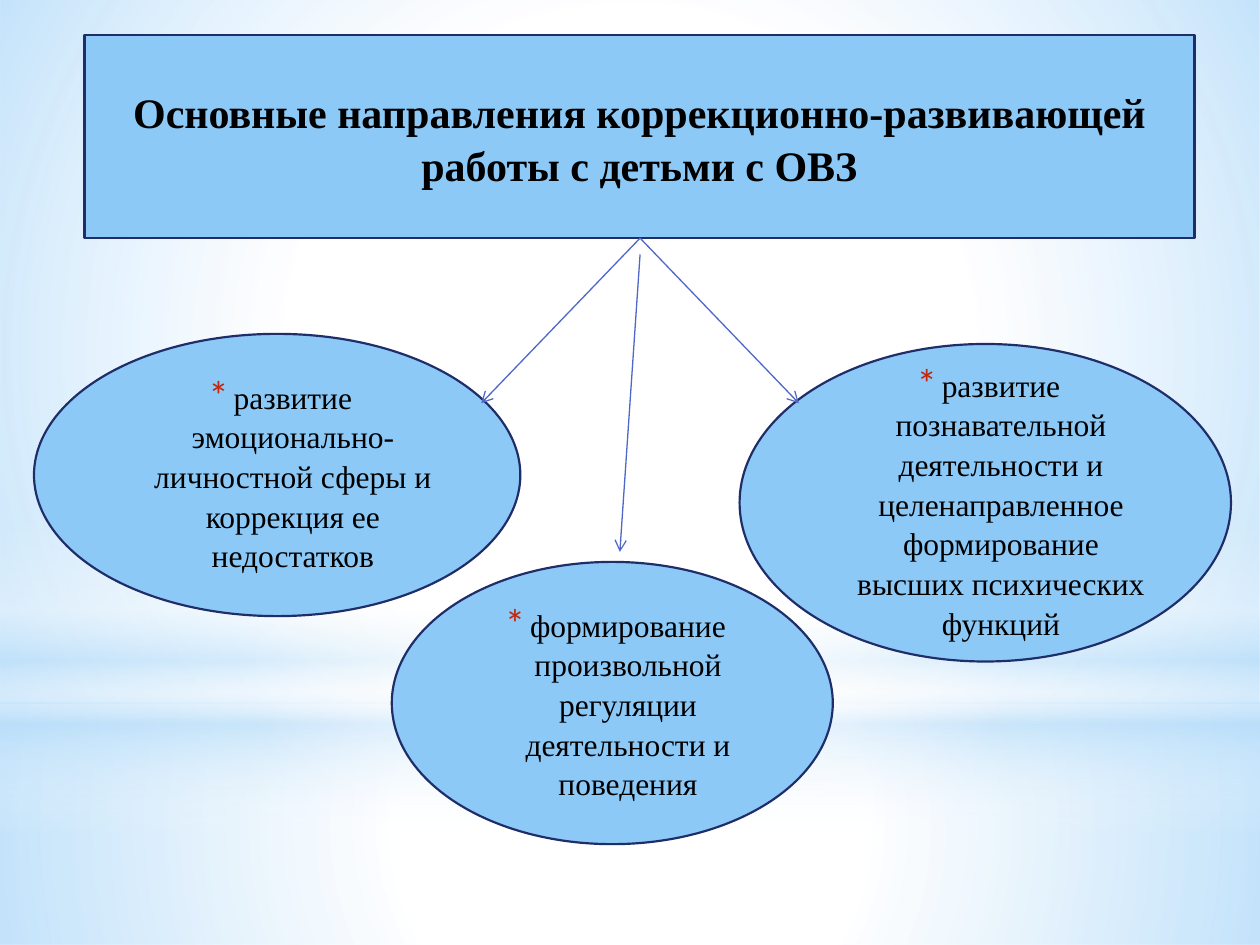
from lxml.etree import SubElement
from pptx import Presentation
from pptx.dml.color import RGBColor
from pptx.enum.shapes import MSO_CONNECTOR, MSO_SHAPE as Preset
from pptx.enum.text import MSO_ANCHOR, MSO_AUTO_SIZE, PP_ALIGN
from pptx.oxml import parse_xml
from pptx.oxml.ns import nsdecls, qn
from pptx.util import Inches, Pt

WHITE = RGBColor(0xFF, 0xFF, 0xFF)
BLACK = RGBColor(0, 0, 0)
PALE_BLUE = RGBColor(0xB4, 0xDC, 0xFA)
SKY_BLUE = RGBColor(0x8C, 0xC9, 0xF7)
NAVY = RGBColor(0x1F, 0x2E, 0x69)
ARROW_BLUE = RGBColor(0x4E, 0x67, 0xC8)
BULLET_RED = RGBColor(0xC3, 0x26, 0x0C)
FONT = "Times New Roman"

CIRCLE = ('<a:path path="circle"><a:fillToRect l="50000" t="50000" '
          'r="50000" b="50000"/></a:path>')
DOWNWARD = '<a:lin ang="5400000" scaled="0"/>'

# Preset, box, gradient direction, stops as (position %, colour, opacity %)
BACKDROP = [
    (Preset.RECTANGLE, (0, 5.58, 10, 1.92), CIRCLE,
     [(0, WHITE, 91), (37, WHITE, 76), (100, PALE_BLUE, 79)]),
    (Preset.RECTANGLE, (0, 0, 10, 5.58), CIRCLE,
     [(0, WHITE, 89), (48, WHITE, 62), (100, PALE_BLUE, 79)]),
    (Preset.RECTANGLE, (0, 4.12, 10, 2.5), DOWNWARD,
     [(0, WHITE, 0), (29, WHITE, 30), (45, PALE_BLUE, 40),
      (55, WHITE, 26), (65, PALE_BLUE, 60), (100, WHITE, 0)]),
    (Preset.OVAL, (0, 1.75, 10, 5.58), CIRCLE,
     [(0, WHITE, 100), (56, WHITE, 0)]),
]
TITLE = "Основные направления коррекционно-развивающей работы с детьми\u00a0с ОВЗ"
MIDDLE = ("формирование произвольной регуляции деятельности и поведения",
          (3.11, 4.46, 3.5, 2.24))
SIDES = [
    ("развитие познавательной деятельности и целенаправленное "
     "формирование высших психических функций", (5.87, 2.73, 3.9, 2.52)),
    ("развитие эмоционально-личностной сферы и коррекция ее недостатков",
     (0.27, 2.65, 3.86, 2.24)),
]
ARROWS = [((5.08, 1.89), (3.82, 3.2)),
          ((5.08, 1.89), (6.34, 3.2)),
          ((5.08, 2.02), (4.92, 4.38))]


def add_bullet(paragraph):
    properties = paragraph._p.get_or_add_pPr()
    properties.set("marL", str(Inches(0.25)))
    properties.set("indent", str(Inches(-0.2)))
    colour = SubElement(properties, qn("a:buClr"))
    SubElement(colour, qn("a:srgbClr"), val=str(BULLET_RED))
    SubElement(properties, qn("a:buSzPct"), val="130000")
    SubElement(properties, qn("a:buFont"), typeface="+mj-lt")
    SubElement(properties, qn("a:buChar"), char="*")


def write_text(shape, text, size, bold=False, bullet=False):
    frame = shape.text_frame
    frame.word_wrap = True
    frame.auto_size = MSO_AUTO_SIZE.NONE
    frame.vertical_anchor = MSO_ANCHOR.MIDDLE
    paragraph = frame.paragraphs[0]
    if bullet:
        add_bullet(paragraph)
    paragraph.alignment = PP_ALIGN.CENTER
    paragraph.line_spacing = 1.05
    paragraph.space_before = Pt(0)
    run = paragraph.add_run()
    run.text = text
    run.font.name = FONT
    run.font.size = Pt(size)
    run.font.bold = bold
    run.font.color.rgb = BLACK


class SlideBuilder:
    def __init__(self, slide):
        self.slide = slide
        self.title = slide.shapes.title
        self.body = slide.placeholders[1]

    def add_shape(self, preset, box):
        shape = self.slide.shapes.add_shape(preset, *map(Inches, box))
        shape.shadow.inherit = False
        return shape

    def add_glow(self, preset, box, direction, stops):
        """Add a translucent gradient shape behind the placeholders."""
        shape = self.add_shape(preset, box)
        shape.line.fill.background()
        stop_xml = "".join(
            f'<a:gs pos="{position * 1000}"><a:srgbClr val="{colour}">'
            f'<a:alpha val="{opacity * 1000}"/></a:srgbClr></a:gs>'
            for position, colour, opacity in stops)
        gradient = parse_xml(
            f'<a:gradFill {nsdecls("a")} rotWithShape="1">'
            f'<a:gsLst>{stop_xml}</a:gsLst>{direction}</a:gradFill>')
        shape._element.spPr.find(qn("a:prstGeom")).addnext(gradient)
        self.title._element.addprevious(shape._element)

    def paint(self, shape):
        shape.fill.solid()
        shape.fill.fore_color.rgb = SKY_BLUE
        shape.line.color.rgb = NAVY
        shape.line.width = Pt(1.25)

    def place(self, placeholder, box, geometry):
        placeholder.left, placeholder.top, placeholder.width, placeholder.height = map(Inches, box)
        outline = parse_xml(f'<a:prstGeom {nsdecls("a")} prst="{geometry}">'
                            '<a:avLst/></a:prstGeom>')
        placeholder._element.spPr.find(qn("a:xfrm")).addnext(outline)
        self.paint(placeholder)

    def set_title(self, text, box):
        self.place(self.title, box, "rect")
        write_text(self.title, text, size=24, bold=True)

    def set_body(self, text, box):
        self.place(self.body, box, "flowChartConnector")
        write_text(self.body, text, size=18, bullet=True)

    def add_oval(self, text, box):
        oval = self.add_shape(Preset.FLOWCHART_CONNECTOR, box)
        self.paint(oval)
        write_text(oval, text, size=18, bullet=True)

    def add_arrow(self, start, end):
        arrow = self.slide.shapes.add_connector(
            MSO_CONNECTOR.STRAIGHT, *map(Inches, start + end))
        arrow.line.color.rgb = ARROW_BLUE
        arrow.line.width = Pt(0.75)
        SubElement(arrow.line._get_or_add_ln(), qn("a:tailEnd"), type="arrow")
        SubElement(arrow._element.spPr, qn("a:effectLst"))


def main():
    presentation = Presentation()
    presentation.slide_width = Inches(10)
    presentation.slide_height = Inches(7.5)
    slide = presentation.slides.add_slide(presentation.slide_layouts[1])
    slide.background.fill.solid()
    slide.background.fill.fore_color.rgb = WHITE

    builder = SlideBuilder(slide)
    for glow in BACKDROP:
        builder.add_glow(*glow)
    builder.set_title(TITLE, (0.67, 0.28, 8.81, 1.61))
    builder.set_body(*MIDDLE)
    for text, box in SIDES:
        builder.add_oval(text, box)
    for start, end in ARROWS:
        builder.add_arrow(start, end)
    presentation.save("out.pptx")


if __name__ == "__main__":
    main()
